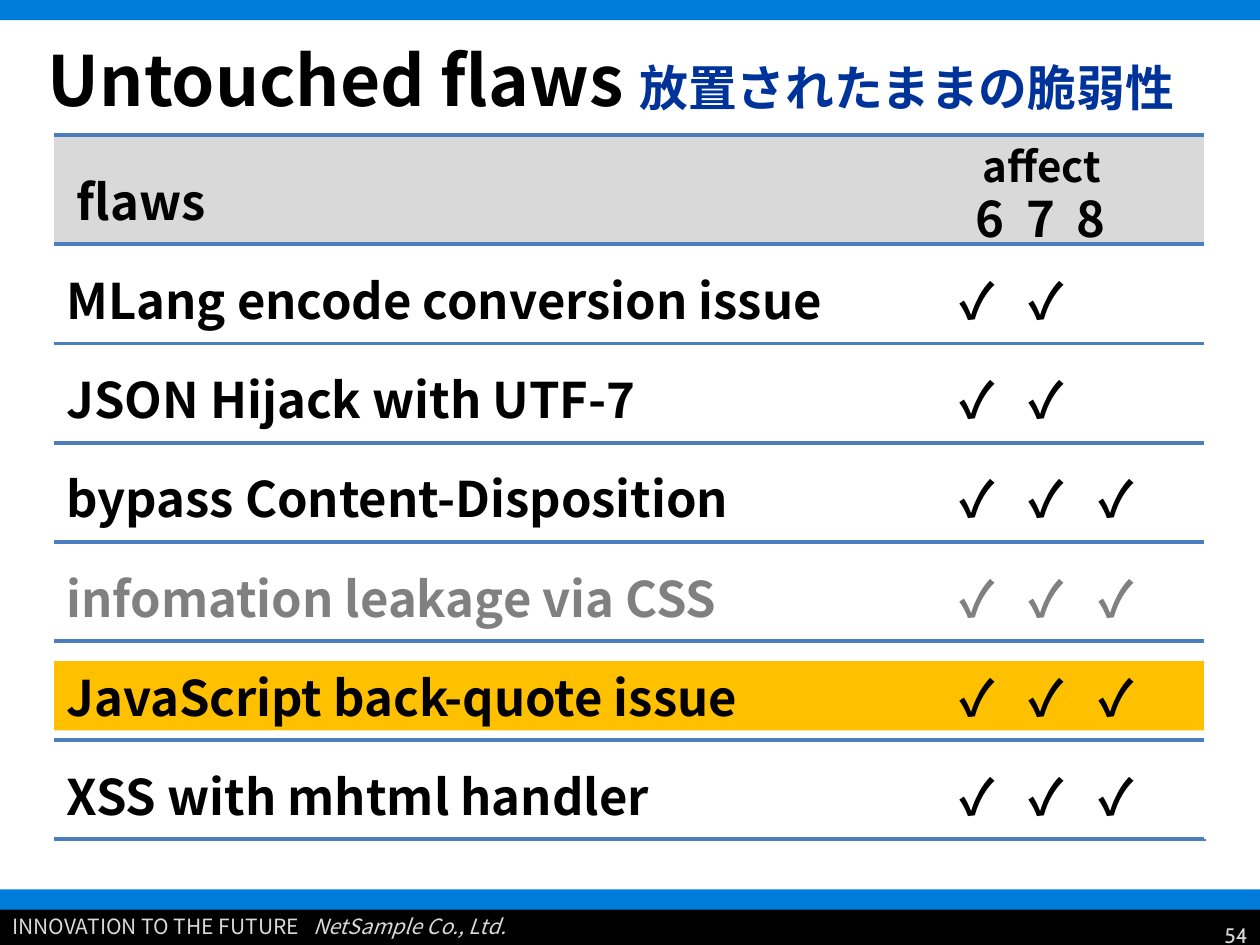
from pptx import Presentation
from pptx.dml.color import RGBColor
from pptx.enum.shapes import MSO_CONNECTOR, MSO_SHAPE
from pptx.enum.text import MSO_ANCHOR, MSO_AUTO_SIZE, PP_ALIGN
from pptx.oxml.ns import qn
from pptx.util import Inches, Pt
from lxml.etree import SubElement

# Content
TITLE = [("Untouched flaws ", {"size": 39.6}),
         ("放置されたままの脆弱性", {"size": 27.9, "color": "003399"})]
VERSIONS = ["6", "7", "8"]
FLAWS = [  # name, affected versions
    ("MLang encode conversion issue", "67"),
    ("JSON Hijack with UTF-7", "67"),
    ("bypass Content-Disposition", "678"),
    ("infomation leakage via CSS", "678"),
    ("JavaScript back-quote issue", "678"),
    ("XSS with mhtml handler", "678"),
]
HIGHLIGHTED = "JavaScript back-quote issue"
FADED = "infomation leakage via CSS"

# Style and grid
FONT = "Noto Sans CJK JP"
BLACK, GREY, PALE, WHITE = "000000", "808080", "D9D9D9", "FFFFFF"
BLUE, RULE, AMBER = "007DDA", "4B7EBC", "FFC000"
W, H = 10, 7.5
LEFT, RIGHT = 0.43, 9.57
HEAD_TOP, HEAD_BOTTOM, BOTTOM = 1.07, 1.94, 6.66
ROW_H = (BOTTOM - HEAD_BOTTOM) / len(FLAWS)
ROW_PAD, TEXT_H = 0.16, 0.57
CHECK_LEFT, CHECK_W, CHECK_STEP = 7.36, 0.79, 0.55
BAR_H = 0.16


def rgb(color):
    return RGBColor.from_string(color)


def add_run(p, text, size=28, color=BLACK, bold=True, italic=False,
            font=FONT, spacing=0):
    r = p.add_run()
    r.text = text
    r.font.size, r.font.bold, r.font.italic = Pt(size), bold, italic
    r.font.name = font
    r.font.color.rgb = rgb(color)
    props = r.font._element
    SubElement(props, qn("a:ea")).set("typeface", font)
    if spacing:
        props.set("spc", str(int(spacing * 100)))


def add_text(text, x, y, w, h=TEXT_H, align=PP_ALIGN.LEFT,
             anchor=MSO_ANCHOR.TOP, **fmt):
    tf = slide.shapes.add_textbox(*map(Inches, (x, y, w, h))).text_frame
    tf.word_wrap = True
    tf.vertical_anchor = anchor
    p = tf.paragraphs[0]
    p.alignment = align
    add_run(p, text, **fmt)
    return p


def add_rect(x, y, w, h, color):
    sp = slide.shapes.add_shape(MSO_SHAPE.RECTANGLE, *map(Inches, (x, y, w, h)))
    sp.shadow.inherit = False
    sp.fill.solid()
    sp.fill.fore_color.rgb = rgb(color)
    sp.line.fill.background()


def add_line(x1, y1, x2, y2, color=RULE):
    line = slide.shapes.add_connector(MSO_CONNECTOR.STRAIGHT,
                                      *map(Inches, (x1, y1, x2, y2)))
    line.line.color.rgb = rgb(color)
    line.line.width = Pt(2.25)
    SubElement(line._element.spPr, qn("a:effectLst"))


prs = Presentation()
prs.slide_width, prs.slide_height = Inches(W), Inches(H)
slide = prs.slides.add_slide(prs.slide_layouts[5])

# Top bar and footer
add_rect(0, 0, W, BAR_H, BLUE)
add_rect(0, 7.14, W, 0.36, BLACK)
add_rect(0, 7.06, W, BAR_H, BLUE)
footer = {"size": 12, "color": PALE, "bold": False}
p = add_text("INNOVATION TO THE FUTURE", 0, 7.2, 7.32, 0.3, **footer)
add_run(p, " ", spacing=5.4, **footer)
add_run(p, "NetSample Co., Ltd.", italic=True, **footer)
add_text("54", 7.67, 7.24, 2.33, 0.36, align=PP_ALIGN.RIGHT,
         anchor=MSO_ANCHOR.MIDDLE, font="Cabin", **footer)

# Title
title = slide.shapes.title
title.left, title.top, title.width, title.height = map(Inches, (0.28, 0, 9.72, 1.25))
tf = title.text_frame
tf.auto_size = MSO_AUTO_SIZE.NONE
tf.vertical_anchor = MSO_ANCHOR.MIDDLE
tf.paragraphs[0].alignment = PP_ALIGN.LEFT
for text, fmt in TITLE:
    add_run(tf.paragraphs[0], text, **fmt)

# Header row
add_rect(LEFT, HEAD_TOP, RIGHT - LEFT, HEAD_BOTTOM - HEAD_TOP, PALE)
add_text("flaws", 0.51, 1.31, 3.15)
add_text("affect", 7.05, HEAD_TOP, 2.44, 0.5, align=PP_ALIGN.CENTER, size=24)
add_text(" ".join(VERSIONS), 7.04, 1.45, 2.44, align=PP_ALIGN.CENTER, spacing=3.1)
add_line(LEFT, HEAD_TOP, RIGHT, HEAD_TOP)
add_line(LEFT, HEAD_BOTTOM, RIGHT, HEAD_BOTTOM)

# One row per flaw, with a check for each affected version
for i, (flaw, affected) in enumerate(FLAWS):
    row_top = HEAD_BOTTOM + i * ROW_H
    y = row_top + ROW_PAD
    color = GREY if flaw == FADED else BLACK
    if flaw == HIGHLIGHTED:
        add_rect(LEFT, y, RIGHT - LEFT, 0.55, AMBER)
    add_text(flaw, LEFT, y, 6.9, color=color)
    for col, version in enumerate(VERSIONS):
        if version in affected:
            add_text("✓", CHECK_LEFT + col * CHECK_STEP, y, CHECK_W,
                     align=PP_ALIGN.CENTER, color=color)
    add_line(LEFT, row_top + ROW_H, RIGHT, row_top + ROW_H)

# White edge that trims the right side of the grid
add_line(RIGHT, 0.92, RIGHT, BOTTOM, WHITE)

prs.save("out.pptx")
